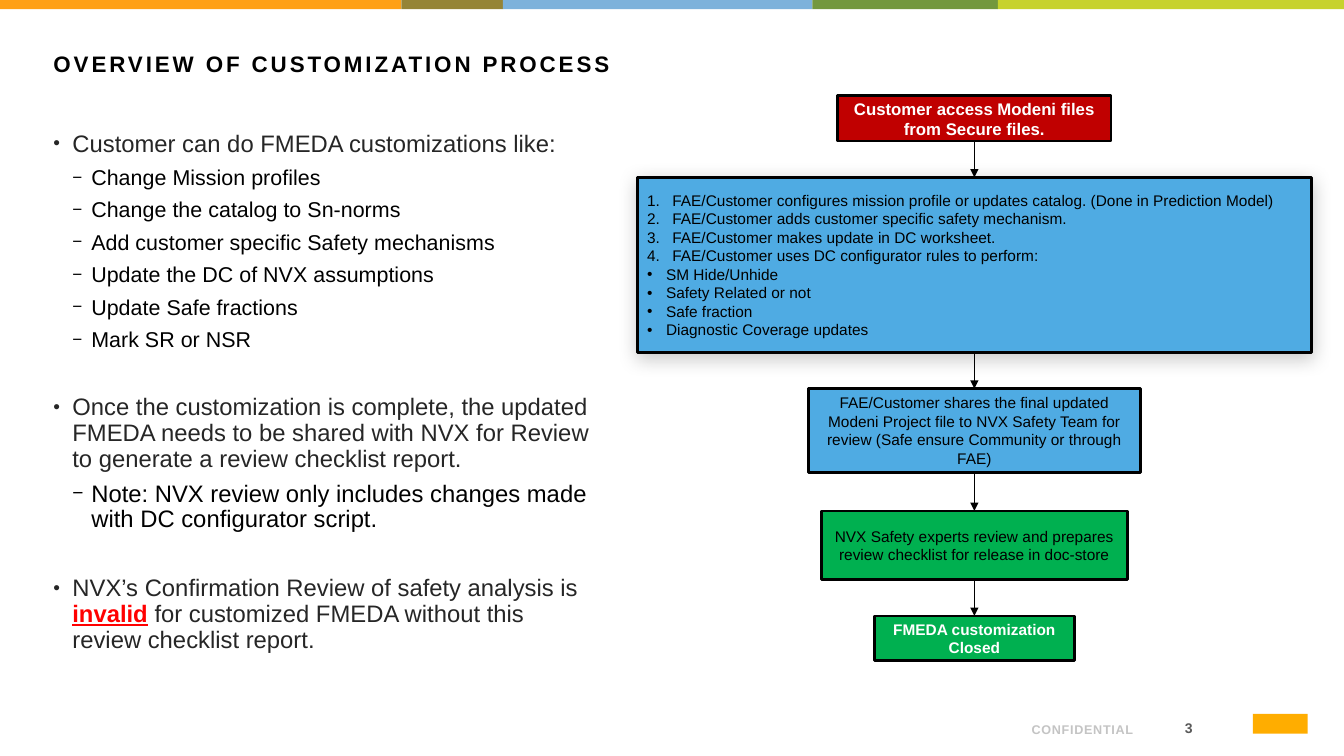
from dataclasses import dataclass

from lxml import etree
from pptx import Presentation
from pptx.dml.color import RGBColor
from pptx.enum.shapes import MSO_CONNECTOR, MSO_SHAPE
from pptx.enum.text import MSO_ANCHOR, MSO_AUTO_SIZE, PP_ALIGN
from pptx.oxml.ns import qn
from pptx.util import Pt

RECTANGLE = MSO_SHAPE.RECTANGLE
STRAIGHT = MSO_CONNECTOR.STRAIGHT
TOP, MIDDLE, BOTTOM = MSO_ANCHOR.TOP, MSO_ANCHOR.MIDDLE, MSO_ANCHOR.BOTTOM
LEFT, CENTER, RIGHT = PP_ALIGN.LEFT, PP_ALIGN.CENTER, PP_ALIGN.RIGHT
NO_AUTOFIT = MSO_AUTO_SIZE.NONE
BOTTOM_SITE, TOP_SITE = 2, 0


@dataclass(frozen=True)
class Theme:
    font: str = "Arial"
    black: str = "000000"
    white: str = "FFFFFF"
    body: str = "262626"
    alert: str = "FF0000"
    number: str = "595959"
    footer: str = "C4C4C4"
    red: str = "C00000"
    blue: str = "4FABE3"
    green: str = "00B050"
    logo: str = "FFAD00"
    title_size: float = 16
    body_size: float = 17
    sub_size: float = 15.3
    start_size: float = 12
    box_size: float = 11
    number_size: float = 10
    footer_size: float = 9


THEME = Theme()

STRIPES = [("FFA015", 286.6), ("958436", 72.7), ("7DB2DB", 221),
           ("73983E", 132.5), ("C7D22D", 247.2)]

CUSTOMIZATIONS = [
    "Change Mission profiles",
    "Change the catalog to Sn-norms",
    "Add customer specific Safety mechanisms",
    "Update the DC of NVX assumptions",
    "Update Safe fractions",
    "Mark SR or NSR",
]

NUMBERED_STEPS = [
    "FAE/Customer configures mission profile or updates catalog. (Done in Prediction Model)",
    "FAE/Customer adds customer specific safety mechanism.",
    "FAE/Customer makes update in DC worksheet.",
    "FAE/Customer uses DC configurator rules to perform:",
]

CONFIGURATOR_RULES = ["SM Hide/Unhide", "Safety Related or not", "Safe fraction",
                      "Diagnostic Coverage updates"]

FLOW_CENTER = 696


def add_text(paragraph, text, size, color, bold=False, underline=False, spacing=0):
    run = paragraph.add_run()
    run.text = text
    font = run.font
    font.name = THEME.font
    font.size = Pt(size)
    font.bold = bold
    font.underline = underline
    font.color.rgb = RGBColor.from_string(color)
    if spacing:
        run._r.get_or_add_rPr().set("spc", str(round(spacing * 100)))


def next_paragraph(frame):
    first = frame.paragraphs[0]
    return frame.add_paragraph() if first.runs else first


def prepare_frame(frame, anchor):
    frame.word_wrap = True
    frame.auto_size = NO_AUTOFIT
    frame.vertical_anchor = anchor


def place(shape, left, top, width, height):
    shape.left, shape.top = Pt(left), Pt(top)
    shape.width, shape.height = Pt(width), Pt(height)


def set_bullet(paragraph, margin, hang, character=None, percent=100):
    properties = paragraph._p.get_or_add_pPr()
    properties.set("marL", str(Pt(margin)))
    properties.set("indent", str(-Pt(hang)))
    etree.SubElement(properties, qn("a:buSzPct")).set("val", str(percent * 1000))
    etree.SubElement(properties, qn("a:buFont")).set("typeface", THEME.font)
    if character:
        etree.SubElement(properties, qn("a:buChar")).set("char", character)
    else:
        etree.SubElement(properties, qn("a:buAutoNum")).set("type", "arabicPeriod")


def add_body_item(frame, level=0, before=5.8):
    paragraph = next_paragraph(frame)
    paragraph.level = level
    paragraph.alignment = LEFT
    paragraph.line_spacing = 0.9
    paragraph.space_before = Pt(before)
    paragraph.space_after = Pt(0.8)
    set_bullet(paragraph, 13.5 * (level + 1), 13.5, "−" if level else "•", 80)
    return paragraph


def add_rectangle(slide, left, top, width, height, fill, line_width=0):
    shape = slide.shapes.add_shape(RECTANGLE, Pt(left), Pt(top), Pt(width), Pt(height))
    shape.shadow.inherit = False
    shape.fill.solid()
    shape.fill.fore_color.rgb = RGBColor.from_string(fill)
    if line_width:
        shape.line.color.rgb = RGBColor.from_string(THEME.black)
        shape.line.width = Pt(line_width)
    else:
        shape.line.fill.background()
    return shape


def add_flow_box(slide, top, width, height, fill, text="", size=THEME.box_size,
                 color=THEME.black, bold=False, line_width=2):
    left = FLOW_CENTER - width / 2
    shape = add_rectangle(slide, left, top, width, height, fill, line_width)
    prepare_frame(shape.text_frame, MIDDLE)
    if text:
        paragraph = shape.text_frame.paragraphs[0]
        paragraph.alignment = CENTER
        add_text(paragraph, text, size, color, bold)
    return shape


def add_soft_shadow(shape):
    effects = shape._element.spPr.find(qn("a:effectLst"))
    shadow = etree.SubElement(effects, qn("a:outerShdw"), blurRad=str(Pt(14)),
                              dist=str(Pt(3)), dir="5400000", rotWithShape="0")
    color = etree.SubElement(shadow, qn("a:srgbClr"), val=THEME.black)
    etree.SubElement(color, qn("a:alpha"), val="22000")


def add_arrow(slide, upper, lower):
    arrow = slide.shapes.add_connector(STRAIGHT, 0, 0, 0, 0)
    arrow.begin_connect(upper, BOTTOM_SITE)
    arrow.end_connect(lower, TOP_SITE)
    arrow.line.color.rgb = RGBColor.from_string(THEME.black)
    arrow.line.width = Pt(0.75)
    etree.SubElement(arrow.line._get_or_add_ln(), qn("a:tailEnd"), type="triangle")
    etree.SubElement(arrow._element.spPr, qn("a:effectLst"))


def add_label(slide, left, top, width, height, text, anchor, **text_format):
    box = slide.shapes.add_textbox(Pt(left), Pt(top), Pt(width), Pt(height))
    prepare_frame(box.text_frame, anchor)
    paragraph = box.text_frame.paragraphs[0]
    paragraph.alignment = RIGHT
    add_text(paragraph, text, bold=True, **text_format)


def add_master_parts(slide):
    left = 0
    for color, width in STRIPES:
        add_rectangle(slide, left, 0, width, 6.5, color)
        left += width
    add_label(slide, 812.2, 509, 46.8, 21.6, "3", MIDDLE,
              size=THEME.number_size, color=THEME.number)
    add_label(slide, 612.7, 505.4, 203.8, 24.5, "CONFIDENTIAL", BOTTOM,
              size=THEME.footer_size, color=THEME.footer, spacing=0.5)
    add_rectangle(slide, 895, 510, 39, 14, THEME.logo)


def fill_title(title):
    place(title, 31, 32.4, 918, 52)
    prepare_frame(title.text_frame, TOP)
    paragraph = title.text_frame.paragraphs[0]
    paragraph.alignment = LEFT
    add_text(paragraph, "OVERVIEW OF CUSTOMIZATION PROCESS", THEME.title_size,
             THEME.black, bold=True, spacing=2.1)


def fill_body(body):
    place(body, 31, 90.7, 404.6, 417.6)
    frame = body.text_frame
    prepare_frame(frame, TOP)
    main_format = {"size": THEME.body_size, "color": THEME.body}
    add_text(add_body_item(frame), "Customer can do FMEDA customizations like:", **main_format)
    for text in CUSTOMIZATIONS:
        add_text(add_body_item(frame, 1), text, THEME.sub_size, THEME.black)
    add_text(add_body_item(frame, before=30),
             "Once the customization is complete, the updated FMEDA needs to be shared "
             "with NVX for Review to generate a review checklist report.", **main_format)
    add_text(add_body_item(frame, 1),
             "Note: NVX review only includes changes made with DC configurator script.",
             THEME.body_size, THEME.black)
    review = add_body_item(frame, before=30)
    add_text(review, "NVX’s Confirmation Review of safety analysis is ", **main_format)
    add_text(review, "invalid", THEME.body_size, THEME.alert, bold=True, underline=True)
    add_text(review, " for customized FMEDA without this review checklist report.", **main_format)


def add_configuration_box(slide):
    box = add_flow_box(slide, 126.7, 481.7, 125.3, THEME.blue, line_width=2.25)
    add_soft_shadow(box)
    for texts, indent, character in ((NUMBERED_STEPS, 18, None), (CONFIGURATOR_RULES, 13.5, "•")):
        for text in texts:
            paragraph = next_paragraph(box.text_frame)
            paragraph.alignment = LEFT
            set_bullet(paragraph, indent, indent, character)
            add_text(paragraph, text, THEME.box_size, THEME.black)
    return box


def add_flow(slide):
    boxes = [
        add_flow_box(slide, 68.4, 195.1, 32.4, THEME.red,
                     "Customer access Modeni files from Secure files.",
                     THEME.start_size, THEME.white, True),
        add_configuration_box(slide),
        add_flow_box(slide, 277.6, 236.9, 59.8, THEME.blue,
                     "FAE/Customer shares the final updated Modeni Project file to NVX Safety "
                     "Team for review (Safe ensure Community or through FAE)"),
        add_flow_box(slide, 365, 218.9, 49, THEME.green,
                     "NVX Safety experts review and prepares review checklist for release "
                     "in doc-store"),
        add_flow_box(slide, 440, 142.6, 31.7, THEME.green, "FMEDA customization Closed",
                     color=THEME.white, bold=True),
    ]
    for upper, lower in zip(boxes, boxes[1:]):
        add_arrow(slide, upper, lower)


def main():
    presentation = Presentation()
    presentation.slide_width, presentation.slide_height = Pt(960), Pt(540)
    slide = presentation.slides.add_slide(presentation.slide_layouts[1])
    add_master_parts(slide)
    fill_title(slide.shapes.title)
    fill_body(slide.placeholders[1])
    add_flow(slide)
    presentation.save("out.pptx")


if __name__ == "__main__":
    main()
